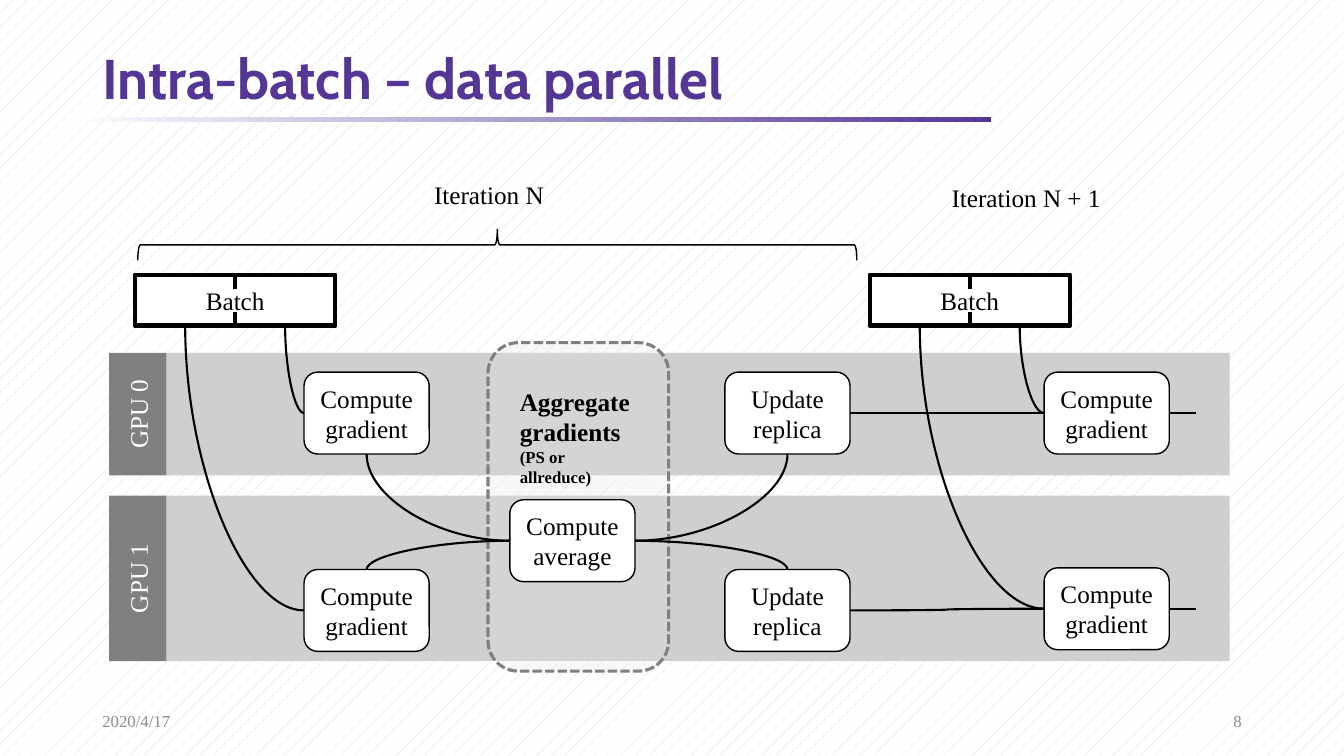
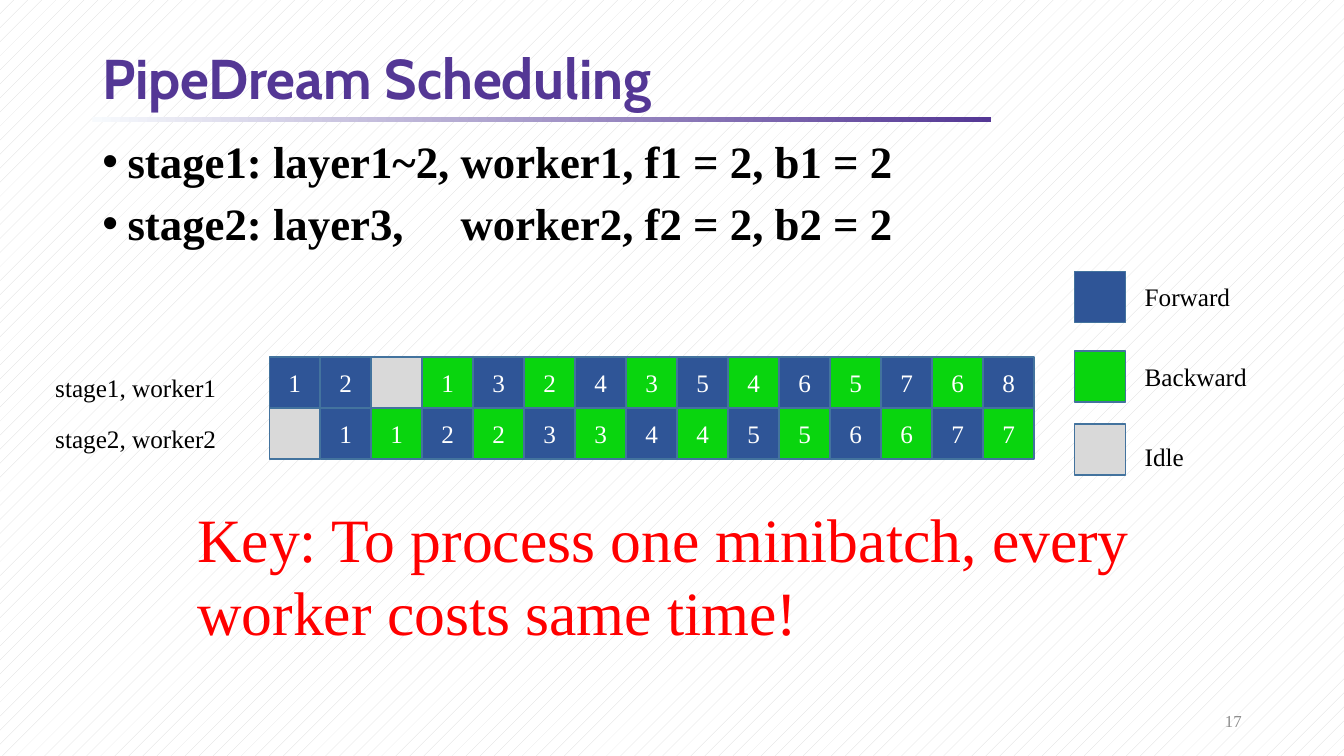
from lxml.etree import SubElement
from pptx import Presentation
from pptx.dml.color import RGBColor
from pptx.enum.dml import MSO_LINE, MSO_PATTERN
from pptx.enum.shapes import MSO_CONNECTOR, MSO_SHAPE
from pptx.enum.text import MSO_ANCHOR, PP_ALIGN
from pptx.oxml.ns import qn
from pptx.util import Inches, Pt

RECT, ROUND, BRACE = MSO_SHAPE.RECTANGLE, MSO_SHAPE.ROUNDED_RECTANGLE, MSO_SHAPE.LEFT_BRACE
LINE, CURVE = MSO_CONNECTOR.STRAIGHT, MSO_CONNECTOR.CURVE
LEFT, MID, RIGHT = PP_ALIGN.LEFT, PP_ALIGN.CENTER, PP_ALIGN.RIGHT
TOP, CENTER = MSO_ANCHOR.TOP, MSO_ANCHOR.MIDDLE
DASH, DOTS = MSO_LINE.SQUARE_DOT, MSO_PATTERN.PERCENT_5
NORTH, WEST, SOUTH, EAST = range(4)

WIDE, HIGH = Inches(13.333), Inches(7.5)
COLS, ROWS = 160, 90
SERIF, SANS = "Times New Roman", "Cabin"
PURPLE, PALE, MUTED = "543795", "F7FAFD", "8C8C8C"
BLACK, WHITE, RED = "000000", "FFFFFF", "FF0000"
LANE, LABEL, EDGE = "D0CECE", "808080", "43739E"
TINT = {"F": "2F5597", "B": "09D50E", "-": "D9D9D9"}


def paint(code):
    return RGBColor.from_string(code)


def across(cols):
    return round(cols * WIDE / COLS)


def down(rows):
    return round(rows * HIGH / ROWS)


def write(frame, text, size=18, color=BLACK, font=SERIF, bold=False,
          align=LEFT, space=None, before=None, bullet=None, tab=None):
    for part in [text] if isinstance(text, str) else text:
        first = not frame.text
        para = frame.paragraphs[0] if first else frame.add_paragraph()
        props = para._p.get_or_add_pPr()
        if bullet:
            props.set("marL", str(Inches(0.25)))
            props.set("indent", str(-Inches(0.25)))
            SubElement(props, qn("a:buFont")).set("typeface", "Arial")
            SubElement(props, qn("a:buChar")).set("char", bullet)
        if tab:
            stop = SubElement(SubElement(props, qn("a:tabLst")), qn("a:tab"))
            stop.set("pos", str(across(tab)))
            stop.set("algn", "l")
        para.alignment = align
        if space:
            para.line_spacing = space
        if before and not first:
            para.space_before = Pt(before)
        run = para.add_run()
        run.text = part
        run.font.size, run.font.name, run.font.bold = Pt(size), font, bold
        run.font.color.rgb = paint(color)


class Deck:
    def __init__(self):
        self.file = Presentation()
        self.file.slide_width, self.file.slide_height = WIDE, HIGH

    def page(self, title, number, date=None):
        self.slide = self.file.slides.add_slide(self.file.slide_layouts[6])
        back = self.slide.background.fill
        back.patterned()
        back.pattern = DOTS
        back.fore_color.rgb, back.back_color.rgb = paint("D9D9D9"), paint(WHITE)
        rule = self.box(11, 13.95, 107, 0.6, fill=PURPLE)
        rule.fill.gradient()
        rule.fill.gradient_angle = 0
        for stop, code in zip(rule.fill.gradient_stops, (PALE, PURPLE)):
            stop.color.rgb = paint(code)
        self.text(11, 5.2, 138, 9, title, anchor=CENTER, size=40,
                  color=PURPLE, font=SANS, bold=True, space=0.9)
        foot = dict(anchor=CENTER, size=12, color=MUTED)
        self.text(113, 83.4, 36, 4.8, number, align=RIGHT, **foot)
        if date:
            self.text(11, 83.4, 36, 4.8, date, **foot)

    def text(self, x, y, w, h, text, anchor=TOP, **style):
        area = self.slide.shapes.add_textbox(across(x), down(y), across(w), down(h))
        frame = area.text_frame
        frame.word_wrap, frame.vertical_anchor = True, anchor
        write(frame, text, **style)
        return frame

    def box(self, x, y, w, h, text=None, form=RECT, fill=None, line=None,
            width=1, dash=None, alpha=None, turn=0, color=BLACK):
        if turn % 180:
            x, y, w, h = x + (w - h) / 2, y + (h - w) / 2, h, w
        shape = self.slide.shapes.add_shape(form, across(x), down(y), across(w), down(h))
        shape.shadow.inherit = False
        shape.rotation = turn
        if fill:
            shape.fill.solid()
            shape.fill.fore_color.rgb = paint(fill)
        else:
            shape.fill.background()
        if alpha:
            tone = shape._element.spPr.find(".//" + qn("a:srgbClr"))
            SubElement(tone, qn("a:alpha")).set("val", str(alpha * 1000))
        if line:
            shape.line.color.rgb = paint(line)
            shape.line.width = Pt(width)
            if dash:
                shape.line.dash_style = dash
        else:
            shape.line.fill.background()
        if text:
            write(shape.text_frame, text, color=color, align=MID)
        return shape

    def link(self, start, port, end=None, side=None, dx=0, dy=0,
             form=CURVE, bend=False, width=1.5):
        wire = self.slide.shapes.add_connector(form, 0, 0, 0, 0)
        wire.begin_connect(start, port)
        if end is not None:
            wire.end_connect(end, side)
        else:
            wire.end_x = wire.begin_x + across(dx)
            wire.end_y = wire.begin_y + down(dy)
        wire.line.color.rgb = paint(BLACK)
        wire.line.width = Pt(width)
        props = wire._element.spPr
        if bend:
            props.find(qn("a:prstGeom")).set("prst", "curvedConnector2")
        SubElement(props, qn("a:effectLst"))

    def lane(self, y, h, name):
        self.box(19.8, y, 126.6, h, fill=LANE)
        self.box(13, y, 6.8, h, name, fill=LABEL, color=WHITE, turn=270)

    def step(self, x, y, text):
        return self.box(x, y, 14.9, 9.75, text, ROUND, WHITE, BLACK)

    def batch(self, x):
        y, h, half = 32.75, 6, 11.9
        style = dict(fill=WHITE, line=BLACK, width=3)
        halves = [self.box(x + i * half, y, half, h, **style) for i in range(2)]
        whole = self.box(x, y, 2 * half, h, "Batch", **style)
        for port, dy in ((NORTH, 1.6), (SOUTH, -1.6)):
            self.link(whole, port, dy=dy, form=LINE, width=3)
        return halves

    def cell(self, x, y, kind, text=None):
        self.box(x, y, 6.07, 6.07, text, fill=TINT[kind], line=EDGE, color=WHITE)


def data(deck):
    deck.page("Intra-batch – data parallel", "8", "2020/4/17")
    deck.lane(42, 14.6, "GPU 0")
    deck.lane(59, 19.7, "GPU 1")
    rows = (44.3, 67.8)
    grads = [deck.step(36.2, y, "Compute gradient") for y in rows]
    deck.box(58.1, 40.8, 21.5, 39.1, form=ROUND, fill="E7E6E6", alpha=26,
             line=LABEL, width=2.25, dash=DASH)
    note = deck.text(60.7, 45.4, 16.2, 10.9, "Aggregate gradients", bold=True)
    write(note, "(PS or allreduce)", size=12, bold=True)
    mean = deck.step(60.7, 59.5, ["Compute", "average"])
    copies = [deck.step(86.3, y, ["Update", "replica"]) for y in rows]
    nexts = [deck.step(124.3, y, "Compute gradient") for y in (44.3, 67.6)]

    for grad, twin, port in zip(grads, copies, (SOUTH, NORTH)):
        deck.link(mean, WEST, grad, port, bend=True)
        deck.link(mean, EAST, twin, port, bend=True)
    for x, goals in ((16.1, grads), (103.55, nexts)):
        for half, goal in zip(reversed(deck.batch(x)), goals):
            deck.link(goal, WEST, half, SOUTH, bend=True)
    for twin, goal in zip(copies, nexts):
        deck.link(twin, EAST, goal, WEST)
        deck.link(goal, EAST, dx=3.2)

    deck.box(16.4, 27.3, 85.6, 3.7, form=BRACE, line=BLACK, turn=90)
    deck.text(50.5, 20.8, 45.8, 4.8, "Iteration N")
    deck.text(112.1, 21.1, 45.8, 4.8, "Iteration N + 1")


def plan(deck):
    deck.page("PipeDream Scheduling", "17")
    deck.text(11, 16, 138, 14.5,
              ["stage1: layer1~2, worker1, f1 = 2, b1 = 2",
               "stage2: layer3,\tworker2, f2 = 2, b2 = 2"],
              size=32, bold=True, space=0.9, before=10, bullet="•", tab=42.65)
    stages = (
        ("stage1, worker1", "F1 F2 - B1 F3 B2 F4 B3 F5 B4 F6 B5 F7 B6 F8"),
        ("stage2, worker2", "- F1 B1 F2 B2 F3 B3 F4 B4 F5 B5 F6 B6 F7 B7"),
    )
    for row, (name, jobs) in enumerate(stages):
        y = 42.5 + row * 6.07
        deck.text(5.4, y + 1.2, 24, 4.8, name)
        for col, job in enumerate(jobs.split()):
            deck.cell(32.05 + col * 6.07, y, job[0], job[1:])
    keys = (("F", "Forward", 32.3), ("B", "Backward", 41.8), ("-", "Idle", 50.5))
    for row, (kind, name, y) in enumerate(keys):
        deck.cell(127.9, y, kind)
        deck.text(135.1, 32.9 + row * 9.5, 18, 4.8, name)
    deck.text(22.3, 59, 115.3, 19, size=44, color=RED,
              text="Key: To process one minibatch, every worker costs same time!")


def main():
    deck = Deck()
    data(deck)
    plan(deck)
    deck.file.save("out.pptx")


if __name__ == "__main__":
    main()
